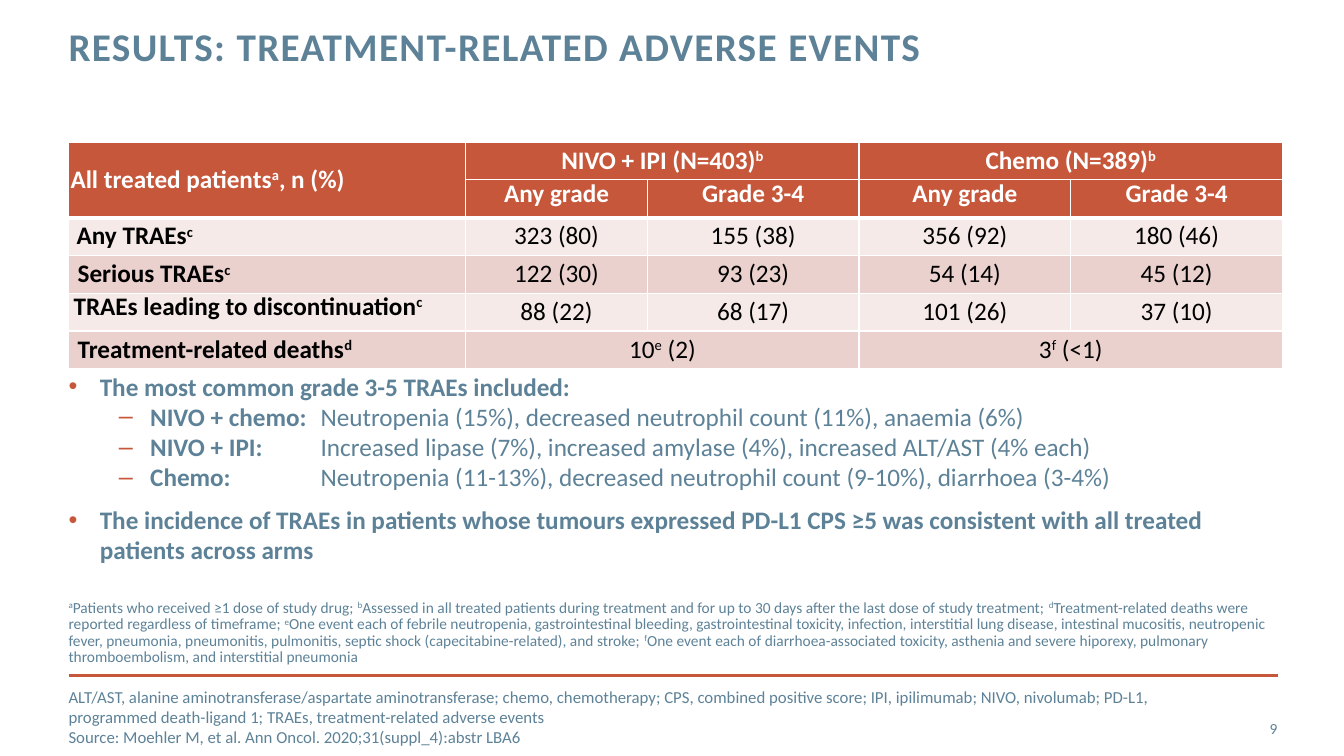
from pptx import Presentation
from pptx.dml.color import RGBColor
from pptx.enum.shapes import MSO_CONNECTOR
from pptx.enum.text import MSO_ANCHOR, PP_ALIGN
from pptx.oxml.ns import qn
from pptx.util import Inches, Pt
from lxml.etree import SubElement

RUST = RGBColor(0xC6, 0x57, 0x3B)
SLATE = RGBColor(0x5D, 0x82, 0x98)
WHITE = RGBColor(0xFF, 0xFF, 0xFF)
BLACK = RGBColor(0, 0, 0)
PALE = RGBColor(0xF5, 0xEA, 0xE8)
PINK = RGBColor(0xEA, 0xD1, 0xCE)
FONT = "Calibri"
LEFT = 0.68

COLS = [3.94, 1.8, 2.1, 2.1, 2.1]
ROWS = [
    ["All treated patients^a^, n (%)", "NIVO + IPI (N=403)^b^", "", "Chemo (N=389)^b^", ""],
    ["", "Any grade", "Grade 3-4", "Any grade", "Grade 3-4"],
    ["Any TRAEs^c^", "323 (80)", "155 (38)", "356 (92)", "180 (46)"],
    ["Serious TRAEs^c^", "122 (30)", "93 (23)", "54 (14)", "45 (12)"],
    ["TRAEs leading to discontinuation^c^", "88 (22)", "68 (17)", "101 (26)", "37 (10)"],
    ["Treatment-related deaths^d^", "10^e^ (2)", "", "3^f^ (<1)", ""],
]
SPANS = [(0, 0, 1, 0), (0, 1, 0, 2), (0, 3, 0, 4), (5, 1, 5, 2), (5, 3, 5, 4)]
LABEL_INSETS = [0.02, 0.02, 0.08, 0.09, 0.05, 0.09]

POINTS = [
    (0, "The most common grade 3-5 TRAEs included:", ""),
    (1, "NIVO + chemo: \t", "Neutropenia (15%), decreased neutrophil count (11%), anaemia (6%)"),
    (1, "NIVO + IPI: \t\t",
     "Increased lipase (7%), increased amylase (4%), increased ALT/AST (4% each)"),
    (1, "Chemo: \t\t",
     "Neutropenia (11-13%), decreased neutrophil count (9-10%), diarrhoea (3-4%)"),
    (0, "The incidence of TRAEs in patients whose tumours expressed PD-L1 CPS ≥5 "
        "was consistent with all treated patients across arms", ""),
]
NOTES = (
    "^a^Patients who received ≥1 dose of study drug; "
    "^b^Assessed in all treated patients during treatment and for up to 30 days after "
    "the last dose of study treatment; "
    "^d^Treatment-related deaths were reported regardless of timeframe; "
    "^e^One event each of febrile neutropenia, gastrointestinal bleeding, gastrointestinal "
    "toxicity, infection, interstitial lung disease, intestinal mucositis, neutropenic fever, "
    "pneumonia, pneumonitis, pulmonitis, septic shock (capecitabine-related), and stroke; "
    "^f^One event each of diarrhoea-associated toxicity, asthenia and severe hiporexy, "
    "pulmonary thromboembolism, and interstitial pneumonia"
)
FOOTER = [
    "ALT/AST, alanine aminotransferase/aspartate aminotransferase; chemo, chemotherapy; "
    "CPS, combined positive score; IPI, ipilimumab; NIVO, nivolumab; PD-L1, programmed "
    "death-ligand 1; TRAEs, treatment-related adverse events",
    "Source: Moehler M, et al. Ann Oncol. 2020;31(suppl_4):abstr LBA6",
]


def add_runs(para, text, size, color, bold=False):
    """Add text run by run, raising the parts between carets."""
    for i, part in enumerate(text.split("^")):
        if part:
            run = para.add_run()
            run.text = part
            font = run.font
            font.name, font.size, font.bold = FONT, Pt(size), bold
            font.color.rgb = color
            if i % 2:
                font._element.set("baseline", "30000")


def add_frame(slide, box, anchor=MSO_ANCHOR.TOP, insets=(0, 0, 0, 0)):
    """Add a wrapping text box and return its text frame."""
    frame = slide.shapes.add_textbox(*map(Inches, box)).text_frame
    frame.word_wrap = True
    frame.vertical_anchor = anchor
    frame.margin_left, frame.margin_top, frame.margin_right, frame.margin_bottom = map(
        Inches, insets)
    return frame


def add_title(slide, box):
    """Add the spaced bold heading."""
    para = add_frame(slide, box).paragraphs[0]
    para.line_spacing = Pt(30)
    add_runs(para, "RESULTS: TREATMENT-RELATED ADVERSE EVENTS", 28, SLATE, True)
    para.runs[0].font._element.set("spc", "100")


def set_edges(cell, row):
    """Draw white cell borders, thick below the header rows."""
    props = cell._tc.get_or_add_tcPr()
    heavy = {"lnB": row == 1 or (row == 0 and cell.is_merge_origin and cell.span_height == 2),
             "lnT": row == 2}
    for side in ("lnL", "lnR", "lnT", "lnB"):
        width = Pt(3 if heavy.get(side) else 1)
        line = SubElement(props, qn("a:" + side), w=str(width))
        fill = SubElement(line, qn("a:solidFill"))
        SubElement(fill, qn("a:srgbClr"), val=str(WHITE))


def fill_cell(cell, text, row, col):
    """Style one table cell and write its text."""
    head, label = row < 2, col == 0
    tight = (row == 1 and not label) or (row == 4 and label)
    set_edges(cell, row)
    cell.fill.solid()
    cell.fill.fore_color.rgb = RUST if head else (PINK if row % 2 else PALE)
    cell.margin_left = Inches(LABEL_INSETS[row] if label else 0.02)
    cell.margin_right = Inches(0.02)
    cell.margin_top = cell.margin_bottom = Inches(0 if tight else 0.05)
    cell.vertical_anchor = MSO_ANCHOR.MIDDLE if head and label else MSO_ANCHOR.TOP
    para = cell.text_frame.paragraphs[0]
    para.line_spacing = 0.9
    para.alignment = PP_ALIGN.LEFT if label else PP_ALIGN.CENTER
    add_runs(para, text, 18, WHITE if head else BLACK, head or label)


def add_grid(slide, box):
    """Add the adverse event table."""
    table = slide.shapes.add_table(len(ROWS), len(COLS), *map(Inches, box)).table
    table.first_row = table.horz_banding = False
    for column, width in zip(table.columns, COLS):
        column.width = Inches(width)
    for row in table.rows:
        row.height = Inches(box[3] / len(ROWS))
    for top, left, bottom, right in SPANS:
        table.cell(top, left).merge(table.cell(bottom, right))
    for r, texts in enumerate(ROWS):
        for c, text in enumerate(texts):
            fill_cell(table.cell(r, c), text, r, c)


def add_points(slide, box):
    """Add the two-level bullet list."""
    frame = add_frame(slide, box, insets=(0, 0.05, 0.1, 0.05))
    for i, (level, lead, rest) in enumerate(POINTS):
        para = frame.add_paragraph() if i else frame.paragraphs[0]
        para.level = level
        props = para._p.get_or_add_pPr()
        props.set("marL", str(Inches(0.31 + 0.5 * level)))
        props.set("indent", str(Inches(-0.31)))
        if i and not level:
            para.space_before = Pt(9)
        color = SubElement(props, qn("a:buClr"))
        SubElement(color, qn("a:srgbClr"), val=str(RUST))
        SubElement(props, qn("a:buFont"), typeface="Arial")
        SubElement(props, qn("a:buChar"), char="–" if level else "•")
        add_runs(para, lead, 18, SLATE, True)
        add_runs(para, rest, 18, SLATE)


def add_notes(slide, box):
    """Add the footnotes, resting on the bottom of the box."""
    para = add_frame(slide, box, MSO_ANCHOR.BOTTOM).paragraphs[0]
    para.line_spacing = 0.9
    add_runs(para, NOTES, 11, SLATE)


def add_footer(slide, box):
    """Add the rule, the abbreviations with the source, and the page number."""
    left, top, width, height = box
    rule = slide.shapes.add_connector(
        MSO_CONNECTOR.STRAIGHT, *map(Inches, (left, top, left + width, top)))
    rule.line.color.rgb = RUST
    rule.line.width = Pt(2)
    SubElement(rule._element.spPr, qn("a:effectLst"))
    frame = add_frame(slide, (left, top + 0.21, 11.03, 0.4), MSO_ANCHOR.MIDDLE)
    for i, text in enumerate(FOOTER):
        para = frame.add_paragraph() if i else frame.paragraphs[0]
        add_runs(para, text, 12, SLATE)
    page = add_frame(slide, (left + width - 0.87, top + 0.33, 0.86, 0.4), MSO_ANCHOR.MIDDLE)
    page.paragraphs[0].alignment = PP_ALIGN.RIGHT
    add_runs(page.paragraphs[0], "9", 11, SLATE)


def main():
    """Build the slide and save it."""
    deck = Presentation()
    deck.slide_width, deck.slide_height = Inches(13.33), Inches(7.5)
    slide = deck.slides.add_slide(deck.slide_layouts[6])
    add_title(slide, (LEFT, 0.27, 9.85, 0.42))
    add_grid(slide, (LEFT, 1.41, sum(COLS), 2.25))
    add_points(slide, (LEFT, 3.63, 12.08, 2.04))
    add_notes(slide, (LEFT, 5.44, 11.99, 1.17))
    add_footer(slide, (LEFT, 6.7, 12, 0.8))
    deck.save("out.pptx")


if __name__ == "__main__":
    main()
